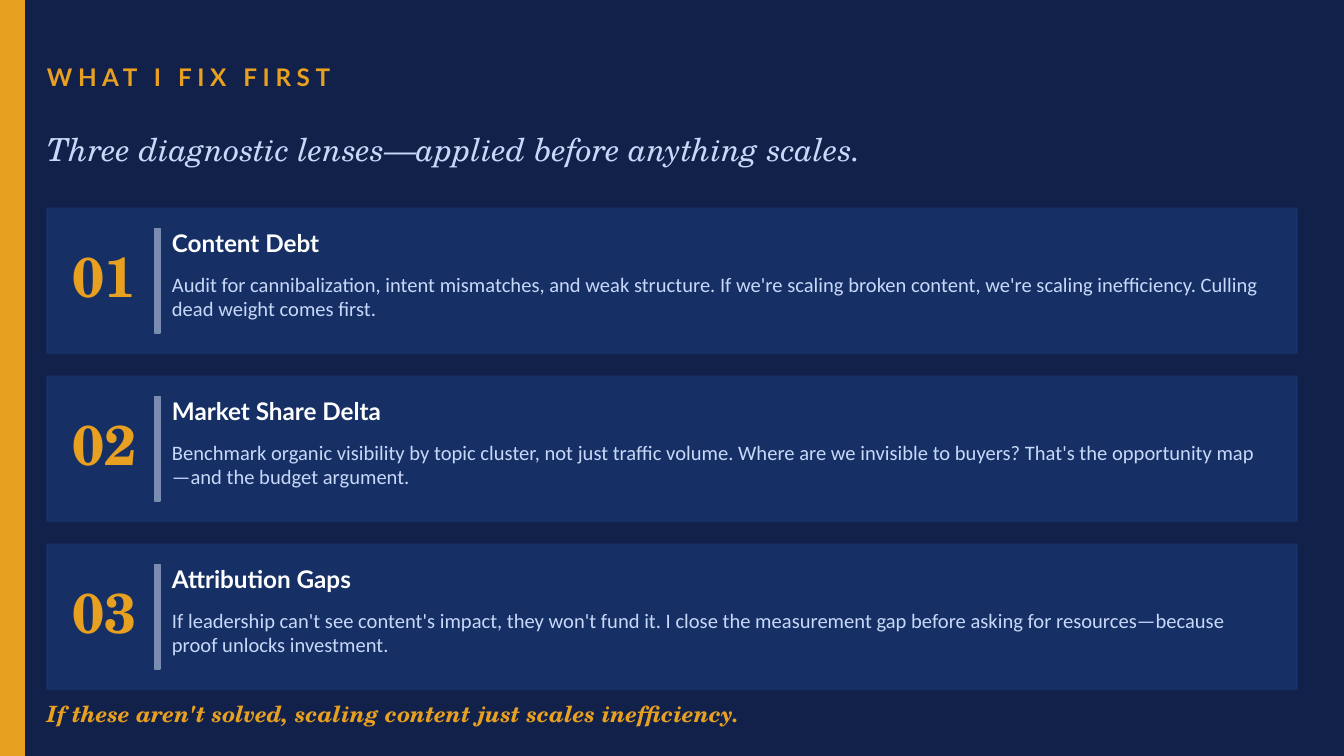
from dataclasses import dataclass

import pptx
import pptx.dml.color
import pptx.enum.shapes
import pptx.enum.text
import pptx.oxml.ns
import pptx.util
from lxml import etree

Inches = pptx.util.Inches
Pt = pptx.util.Pt
ANCHOR = pptx.enum.text.MSO_ANCHOR
ALIGN = pptx.enum.text.PP_ALIGN


@dataclass(frozen=True)
class Theme:
    background: str = "12214A"
    accent: str = "E8A020"
    card: str = "1A3A7A"
    divider: str = "7A8CB0"
    heading: str = "FFFFFF"
    body: str = "C8D8F8"
    serif: str = "TeX Gyre Schola"
    sans: str = "Lato"
    body_font: str = "Calibri"
    title_size: int = 13
    subtitle_size: int = 17
    number_size: int = 30
    body_size: int = 11
    closing_size: int = 12


THEME = Theme()
SLIDE_WIDTH = 10
SLIDE_HEIGHT = SLIDE_WIDTH * 9 / 16
MARGIN = 0.35
CARD_WIDTH = 9.3
FIRST_CARD_TOP = 1.55
CARD_PITCH = 1.25

LENSES = [
    ("Content Debt",
     "Audit for cannibalization, intent mismatches, and weak structure. "
     "If we're scaling broken content, we're scaling inefficiency. "
     "Culling dead weight comes first."),
    ("Market Share Delta",
     "Benchmark organic visibility by topic cluster, not just traffic volume. "
     "Where are we invisible to buyers? "
     "That's the opportunity map—and the budget argument."),
    ("Attribution Gaps",
     "If leadership can't see content's impact, they won't fund it. "
     "I close the measurement gap before asking for resources—because "
     "proof unlocks investment."),
]


def rgb(color):
    return pptx.dml.color.RGBColor.from_string(color)


def set_opacity(fill_parent, percent):
    """Make the solid fill directly inside an XML element translucent."""
    color = fill_parent.find(pptx.oxml.ns.qn("a:solidFill"))[0]
    alpha = etree.SubElement(color, pptx.oxml.ns.qn("a:alpha"))
    alpha.set("val", str(percent * 1000))


def add_block(slide, left, top, width, height, color):
    block = slide.shapes.add_shape(
        pptx.enum.shapes.MSO_SHAPE.RECTANGLE,
        Inches(left), Inches(top), Inches(width), Inches(height))
    block.shadow.inherit = False
    block.fill.solid()
    block.fill.fore_color.rgb = rgb(color)
    block.line.color.rgb = rgb(color)
    block.line.width = Pt(1)
    return block


def add_text(slide, left, top, width, height, text, font, size, color,
             bold=False, italic=False, align=ALIGN.LEFT,
             anchor=ANCHOR.MIDDLE, spacing=None):
    """Add a text box without insets; spacing is letter spacing in points."""
    box = slide.shapes.add_textbox(
        Inches(left), Inches(top), Inches(width), Inches(height))
    frame = box.text_frame
    frame.word_wrap = True
    frame.vertical_anchor = anchor
    frame.margin_left = frame.margin_right = 0
    frame.margin_top = frame.margin_bottom = 0
    paragraph = frame.paragraphs[0]
    paragraph.text = text
    paragraph.alignment = align
    paragraph.font.name = font
    paragraph.font.size = Pt(size)
    paragraph.font.color.rgb = rgb(color)
    paragraph.font.bold = bold
    paragraph.font.italic = italic
    if spacing:
        run_properties = paragraph.runs[0]._r.get_or_add_rPr()
        run_properties.set("spc", str(spacing * 100))


def add_lens_card(slide, top, number, heading, description):
    card = add_block(slide, MARGIN, top, CARD_WIDTH, 1.08, THEME.card)
    properties = card._element.spPr
    set_opacity(properties, 60)
    set_opacity(properties.find(pptx.oxml.ns.qn("a:ln")), 40)

    add_text(slide, 0.45, top + 0.05, 0.65, 0.9, f"{number:02d}",
             THEME.serif, THEME.number_size, THEME.accent,
             bold=True, align=ALIGN.CENTER)
    add_block(slide, 1.15, top + 0.15, 0.04, 0.78, THEME.divider)
    add_text(slide, 1.28, top + 0.06, 2.1, 0.4, heading,
             THEME.sans, THEME.title_size, THEME.heading, bold=True)
    add_text(slide, 1.28, top + 0.47, 8.2, 0.55, description,
             THEME.body_font, THEME.body_size, THEME.body, anchor=ANCHOR.TOP)


def main():
    deck = pptx.Presentation()
    deck.slide_width = Inches(SLIDE_WIDTH)
    deck.slide_height = Inches(SLIDE_HEIGHT)
    slide = deck.slides.add_slide(deck.slide_layouts[6])
    slide.background.fill.solid()
    slide.background.fill.fore_color.rgb = rgb(THEME.background)

    add_block(slide, 0, 0, 0.18, SLIDE_HEIGHT, THEME.accent)
    add_text(slide, MARGIN, 0.3, 9, 0.55, "WHAT I FIX FIRST",
             THEME.sans, THEME.title_size, THEME.accent, bold=True, spacing=3)
    add_text(slide, MARGIN, 0.88, 9, 0.45,
             "Three diagnostic lenses—applied before anything scales.",
             THEME.serif, THEME.subtitle_size, THEME.body, italic=True)

    for index, (heading, description) in enumerate(LENSES):
        add_lens_card(slide, FIRST_CARD_TOP + index * CARD_PITCH,
                      index + 1, heading, description)

    add_text(slide, MARGIN, 5.15, CARD_WIDTH, 0.32,
             "If these aren't solved, scaling content just scales inefficiency.",
             THEME.serif, THEME.closing_size, THEME.accent,
             bold=True, italic=True)
    deck.save("out.pptx")


if __name__ == "__main__":
    main()
